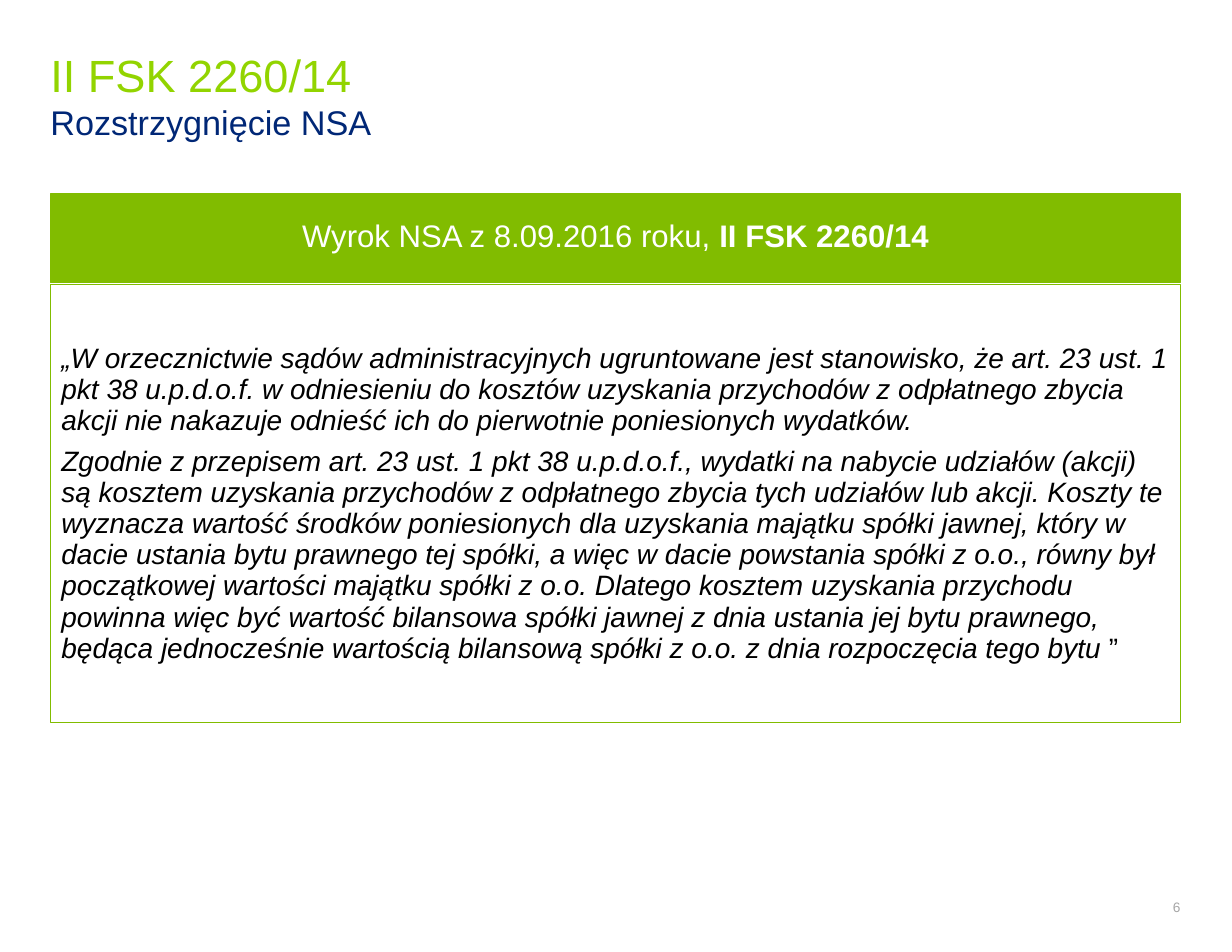
from pptx import Presentation
from pptx.dml.color import RGBColor
from pptx.enum.shapes import MSO_SHAPE
from pptx.enum.text import MSO_ANCHOR, MSO_AUTO_SIZE, PP_ALIGN
from pptx.util import Pt

COLORS = {"lime": "92D400", "navy": "002776", "green": "81BC00",
          "white": "FFFFFF", "black": "000000", "grey": "A6A6A6"}

LEFT, WIDTH = 32.4, 726.6
TITLE_BOX = (LEFT, 22.3, WIDTH, 77)
HEADER_BOX = (LEFT, 124.6, WIDTH, 56.9)
QUOTE_BOX = (LEFT, 182.9, WIDTH, 281.5)
NUMBER_BOX = (690.5, 571.7, 68.4, 22.3)

QUOTE = [
    [("„W orzecznictwie sądów administracyjnych ugruntowane jest stanowisko, "
      "że art. 23 ust. 1 pkt 38 u.p.d.o.f. w odniesieniu do kosztów uzyskania "
      "przychodów z odpłatnego zbycia akcji nie nakazuje odnieść ich do "
      "pierwotnie poniesionych wydatków.", {"italic": True})],
    [("Zgodnie z przepisem art. 23 ust. 1 pkt 38 u.p.d.o.f., wydatki na nabycie "
      "udziałów (akcji) są kosztem uzyskania przychodów z odpłatnego zbycia tych "
      "udziałów lub akcji. Koszty te wyznacza wartość środków poniesionych dla "
      "uzyskania majątku spółki jawnej, który w dacie ustania bytu prawnego tej "
      "spółki, a więc w dacie powstania spółki z o.o., równy był początkowej "
      "wartości majątku spółki z o.o. Dlatego kosztem uzyskania przychodu powinna "
      "więc być wartość bilansowa spółki jawnej z dnia ustania jej bytu prawnego, "
      "będąca jednocześnie wartością bilansową spółki z o.o. z dnia rozpoczęcia "
      "tego bytu ", {"italic": True}), ("”", {})],
]


def rgb(name):
    """Return the named palette colour."""
    return RGBColor.from_string(COLORS[name])


def set_frame(tf, margin=0):
    """Wrap and centre a text frame vertically, with equal margins."""
    values = {"word_wrap": True, "auto_size": MSO_AUTO_SIZE.NONE,
              "vertical_anchor": MSO_ANCHOR.MIDDLE}
    for side in ("left", "top", "right", "bottom"):
        values[f"margin_{side}"] = Pt(margin)
    for name, value in values.items():
        setattr(tf, name, value)


def add_run(p, text, size, color, **formats):
    """Append a formatted run to a paragraph."""
    r = p.add_run()
    r.text = text
    r.font.color.rgb = rgb(color)
    for name, value in {"name": "Arial", "size": Pt(size), **formats}.items():
        setattr(r.font, name, value)


def place_title(s, box, title, subtitle):
    """Put the two-line heading in the title placeholder."""
    sp = s.shapes.title
    sp.left, sp.top, sp.width, sp.height = map(Pt, box)
    set_frame(sp.text_frame)
    p = sp.text_frame.paragraphs[0]
    p.alignment = PP_ALIGN.LEFT
    add_run(p, title, 29, "lime")
    p.add_line_break()
    add_run(p, subtitle, 22, "navy")


def place_panel(s, box, fill, paragraphs, size, color, align):
    """Draw a green-edged panel holding paragraphs of runs."""
    sp = s.shapes.add_shape(MSO_SHAPE.RECTANGLE, *map(Pt, box))
    sp.shadow.inherit = False
    sp.fill.solid()
    sp.fill.fore_color.rgb = rgb(fill)
    sp.line.color.rgb = rgb("green")
    sp.line.width = Pt(1)
    tf = sp.text_frame
    set_frame(tf, 7.2)
    for i, runs in enumerate(paragraphs):
        p = tf.add_paragraph() if i else tf.paragraphs[0]
        for name, value in {"alignment": align, "line_spacing": Pt(20),
                            "space_after": Pt(6)}.items():
            setattr(p, name, value)
        for text, formats in runs:
            add_run(p, text, size, color, **formats)


def place_number(s, box, number):
    """Write the page number at the lower right."""
    tf = s.shapes.add_textbox(*map(Pt, box)).text_frame
    set_frame(tf)
    p = tf.paragraphs[0]
    p.alignment = PP_ALIGN.RIGHT
    add_run(p, number, 8.8, "grey")


def main():
    """Build and save the ruling slide."""
    prs = Presentation()
    prs.slide_width, prs.slide_height = Pt(792), Pt(612)
    s = prs.slides.add_slide(prs.slide_layouts[5])
    place_title(s, TITLE_BOX, "II FSK 2260/14", "Rozstrzygnięcie NSA")
    header = [[("Wyrok NSA z 8.09.2016 roku, ", {}),
               ("II FSK 2260/14", {"bold": True})]]
    place_panel(s, HEADER_BOX, "green", header, 20, "white", PP_ALIGN.CENTER)
    place_panel(s, QUOTE_BOX, "white", QUOTE, 18, "black", PP_ALIGN.LEFT)
    place_number(s, NUMBER_BOX, "6")
    prs.save("out.pptx")


if __name__ == "__main__":
    main()
